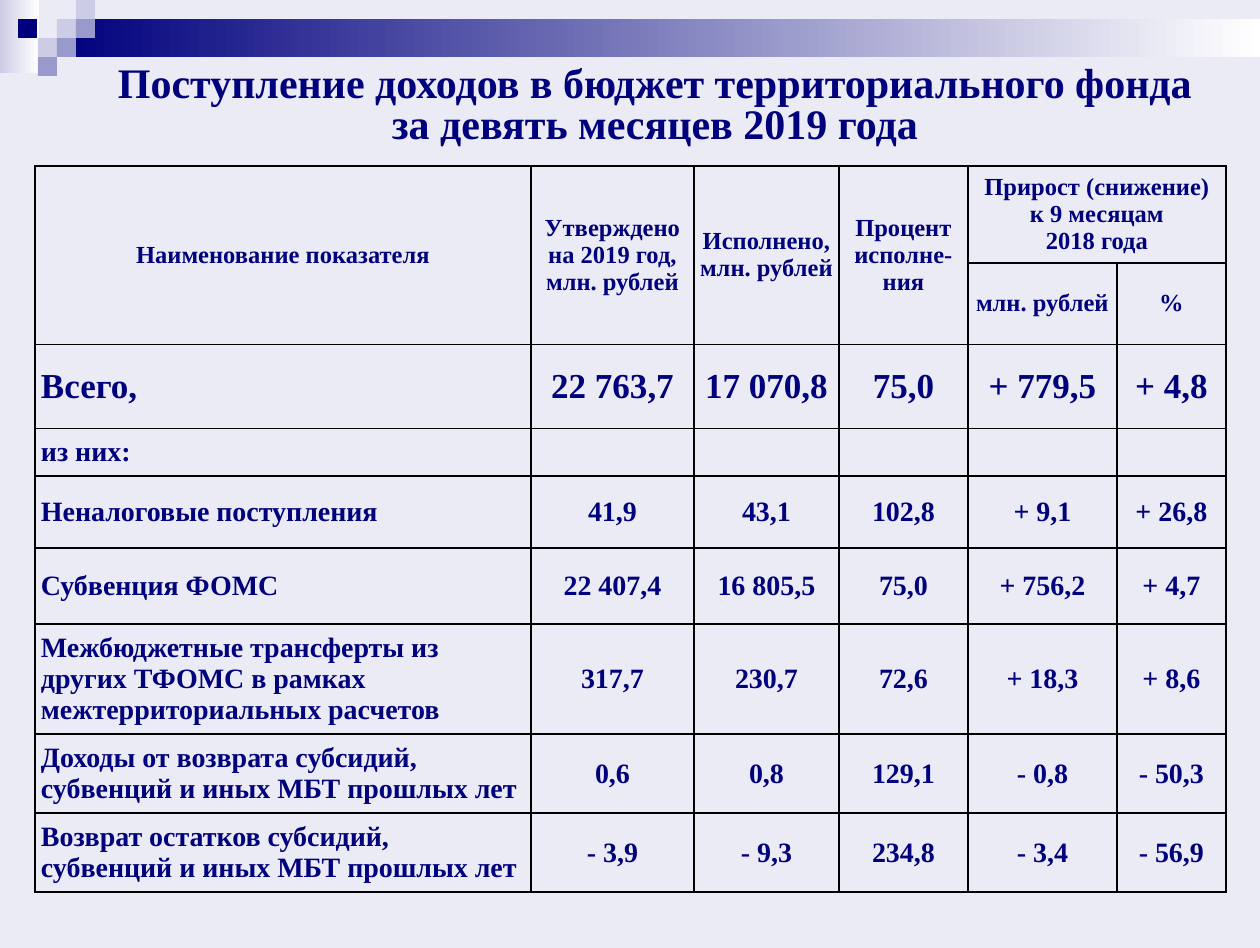
from lxml import etree
from pptx import Presentation
from pptx import util as u
from pptx.dml.color import RGBColor
from pptx.enum import shapes, text
from pptx.oxml.ns import qn

PX = 914400 / 126
NAVY, LILAC, VIOLET = "00007D", "CCCCE6", "9999CC"
FONT = "Times New Roman"


def px(n):
    return u.Emu(round(n * PX))


def rgb(value):
    return RGBColor.from_string(value)


prs = Presentation()
prs.slide_width, prs.slide_height = px(1260), px(948)
s = prs.slides.add_slide(prs.slide_layouts[5])
s.background.fill.solid()
s.background.fill.fore_color.rgb = rgb("EBEBF5")

# Header band: two gradient bars, then a mosaic of small squares
SQUARE = 19
bars = [(0, 0, 39, 73, LILAC), (57, 19, 1203, 38, NAVY)]
squares = [(57, 19, LILAC), (76, 0, LILAC), (76, 19, VIOLET), (38, 38, LILAC),
           (18, 19, NAVY), (57, 38, VIOLET), (38, 57, VIOLET)]
for left, top, width, height, color in bars + [
        (x, y, SQUARE, SQUARE, c) for x, y, c in squares]:
    sp = s.shapes.add_shape(shapes.MSO_SHAPE.RECTANGLE,
                            px(left), px(top), px(width), px(height))
    sp.shadow.inherit = False
    sp.line.fill.background()
    if width > SQUARE:
        sp.fill.gradient()
        sp.fill.gradient_angle = 0
        for stop, end_color in zip(sp.fill.gradient_stops, (color, "FFFFFF")):
            stop.color.rgb = rgb(end_color)
    else:
        sp.fill.solid()
        sp.fill.fore_color.rgb = rgb(color)

# Title
title = s.shapes.title
title.left, title.top, title.width, title.height = px(84), px(54), px(1142), px(106)
tf = title.text_frame
tf.text = ("Поступление доходов в бюджет территориального фонда\v"
           "за девять месяцев 2019 года")
tf.auto_size = text.MSO_AUTO_SIZE.NONE
tf.vertical_anchor = text.MSO_ANCHOR.MIDDLE
p = tf.paragraphs[0]
p.alignment = text.PP_ALIGN.CENTER
p.line_spacing = 0.8
p.font.name, p.font.size, p.font.bold = FONT, u.Pt(24), True
p.font.color.rgb = rgb(NAVY)

# Income table
col_widths = [496, 163, 145, 129, 149, 109]
row_heights = [97, 81, 84, 48, 72, 76, 110, 79, 79]
row_sizes = [14, 14, 20] + [16] * 6
rows = [
    ["Наименование показателя", "Утверждено\nна 2019 год,\nмлн. рублей",
     "Исполнено, млн. рублей", "Процент\nисполне-ния",
     "Прирост (снижение)\vк 9 месяцам\n2018 года", ""],
    ["", "", "", "", "млн. рублей", "%"],
    ["Всего,", "22 763,7", "17 070,8", "75,0", "+ 779,5", "+ 4,8"],
    ["из них:", "", "", "", "", ""],
    ["Неналоговые поступления", "41,9", "43,1", "102,8", "+ 9,1", "+ 26,8"],
    ["Субвенция ФОМС", "22 407,4", "16 805,5", "75,0", "+ 756,2", "+ 4,7"],
    ["Межбюджетные трансферты из других ТФОМС в рамках межтерриториальных расчетов",
     "317,7", "230,7", "72,6", "+ 18,3", "+ 8,6"],
    ["Доходы от возврата субсидий, субвенций и иных МБТ прошлых лет",
     "0,6", "0,8", "129,1", "- 0,8", "- 50,3"],
    ["Возврат остатков субсидий, субвенций и иных МБТ прошлых лет",
     "- 3,9", "- 9,3", "234,8", "- 3,4", "- 56,9"],
]
tbl = s.shapes.add_table(len(rows), len(col_widths), px(35), px(166),
                         px(sum(col_widths)), px(sum(row_heights))).table
tbl.first_row = tbl.horz_banding = False
for col, width in zip(tbl.columns, col_widths):
    col.width = px(width)
for row, height in zip(tbl.rows, row_heights):
    row.height = px(height)

for i, row in enumerate(rows):
    for j, value in enumerate(row):
        cell = tbl.cell(i, j)
        cell.text = value
        cell.vertical_anchor = text.MSO_ANCHOR.MIDDLE
        cell.margin_left = cell.margin_right = px(6)
        cell.margin_top = cell.margin_bottom = 0
        for p in cell.text_frame.paragraphs:
            is_label = j == 0 and i > 1
            p.alignment = text.PP_ALIGN.LEFT if is_label else text.PP_ALIGN.CENTER
            p.font.name, p.font.size, p.font.bold = FONT, u.Pt(row_sizes[i]), True
            p.font.color.rgb = rgb(NAVY)
        tcPr = cell._tc.get_or_add_tcPr()
        for side in ("a:lnL", "a:lnR", "a:lnT", "a:lnB"):
            ln = etree.SubElement(tcPr, qn(side), w=str(u.Pt(1)))
            fill = etree.SubElement(ln, qn("a:solidFill"))
            etree.SubElement(fill, qn("a:srgbClr"), val="000000")
        cell.fill.background()

for j in range(4):
    tbl.cell(0, j).merge(tbl.cell(1, j))
tbl.cell(0, 4).merge(tbl.cell(0, 5))

prs.save("out.pptx")
